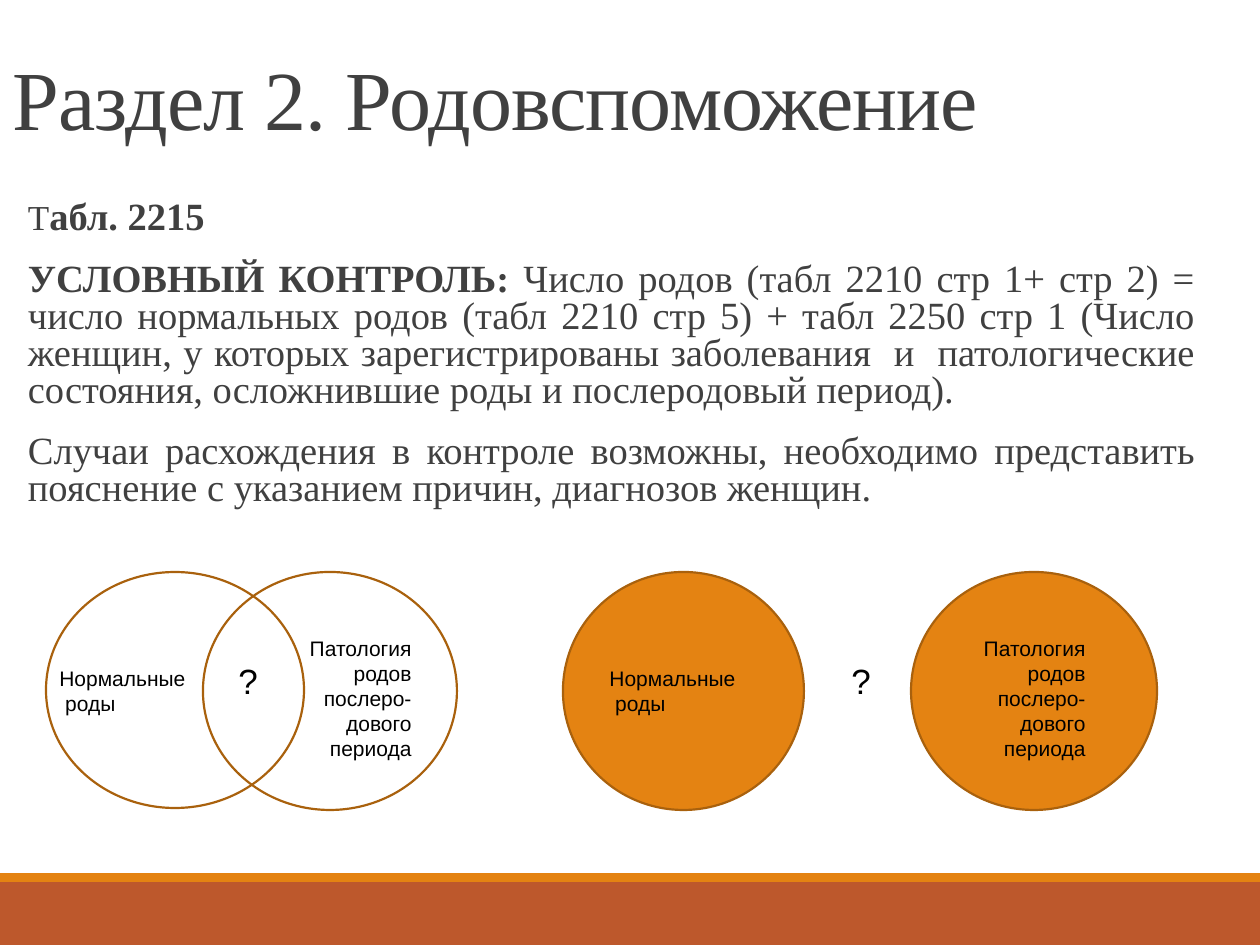
from pptx import Presentation
from pptx import util as u
from pptx.dml.color import RGBColor
from pptx.enum import shapes, text

WHITE = RGBColor(0xFF, 0xFF, 0xFF)
BLACK = RGBColor(0x00, 0x00, 0x00)
GREY = RGBColor(0x40, 0x40, 0x40)
ORANGE = RGBColor(0xE4, 0x83, 0x12)
RUST = RGBColor(0xBD, 0x58, 0x2C)
BROWN = RGBColor(0xA9, 0x61, 0x0D)
SERIF, SANS = "Times New Roman", "Arial"
WIDTH, HEIGHT = 1260, 945
PX = 914400 / 126
ALIGN = text.PP_ALIGN


class Page:
    """Current slide together with its style."""

    def __init__(self, deck):
        self.slide = deck.slides.add_slide(deck.slide_layouts[6])
        fill = self.slide.background.fill
        fill.solid()
        fill.fore_color.rgb = WHITE

    @staticmethod
    def emu(*lengths):
        return [u.Emu(round(length * PX)) for length in lengths]

    def shape(self, kind, box, fill=None, line=None):
        item = self.slide.shapes.add_shape(kind, *self.emu(*box))
        item.shadow.inherit = False
        if fill is None:
            item.fill.background()
        else:
            item.fill.solid()
            item.fill.fore_color.rgb = fill
        if line is None:
            item.line.fill.background()
        else:
            item.line.color.rgb = line
            item.line.width = u.Pt(1.25)

    def frame(self, box, **settings):
        frame = self.slide.shapes.add_textbox(*self.emu(*box)).text_frame
        for name, value in ({"word_wrap": True} | settings).items():
            setattr(frame, name, value)
        return frame

    def style(self, run, size, font, color, bold=False):
        values = {"size": u.Pt(size), "name": font, "bold": bold}
        for name, value in values.items():
            setattr(run.font, name, value)
        run.font.color.rgb = color

    def title(self, box, words):
        frame = self.frame(box, vertical_anchor=text.MSO_ANCHOR.BOTTOM)
        line = frame.paragraphs[0]
        line.line_spacing = 0.85
        run = line.add_run()
        run.text = words
        self.style(run, 48, SERIF, GREY)
        run.font._element.set("spc", "-50")

    def body(self, box, paragraphs):
        frame = self.frame(box, margin_left=0, margin_right=0)
        for index, (align, runs) in enumerate(paragraphs):
            line = frame.add_paragraph() if index else frame.paragraphs[0]
            values = {"alignment": align, "line_spacing": 0.8,
                      "space_before": u.Pt(12), "space_after": u.Pt(2)}
            for name, value in values.items():
                setattr(line, name, value)
            for words, size, bold in runs:
                run = line.add_run()
                run.text = words
                self.style(run, size, SERIF, GREY, bold)

    def label(self, box, words, size=12, align=ALIGN.LEFT, wrap=True):
        frame = self.frame(box, word_wrap=wrap,
                           auto_size=text.MSO_AUTO_SIZE.SHAPE_TO_FIT_TEXT)
        line = frame.paragraphs[0]
        line.text = words
        line.alignment = align
        for run in line.runs:
            self.style(run, size, SANS, BLACK)


def main():
    deck = Presentation()
    deck.slide_width, deck.slide_height = Page.emu(WIDTH, HEIGHT)
    page = Page(deck)

    # Footer bands
    page.shape(shapes.MSO_SHAPE.RECTANGLE, (0, 882, WIDTH, 63), RUST)
    page.shape(shapes.MSO_SHAPE.RECTANGLE, (0, 873, WIDTH, 9), ORANGE)

    # Heading and explanation
    page.title((0, 38, 1134, 116), "Раздел 2. Родовспоможение")
    page.body((28, 195, 1167, 649), [
        (ALIGN.LEFT, [("Т", 20, False), ("абл. 2215", 22, True)]),
        (ALIGN.JUSTIFY, [
            ("УСЛОВНЫЙ КОНТРОЛЬ:", 22, True),
            (" Число родов (табл 2210 стр 1+ стр 2) = число нормальных родов "
             "(табл 2210 стр 5) + табл 2250 стр 1 (Число женщин, у которых "
             "зарегистрированы заболевания  и  патологические состояния, "
             "осложнившие роды и послеродовый период).", 22, False)]),
        (ALIGN.JUSTIFY, [
            ("Случаи расхождения в контроле возможны, необходимо представить "
             "пояснение с указанием причин, диагнозов женщин.", 22, False)]),
    ])

    # Overlapping sets on the left, separate sets on the right
    for left, width, height, fill in [(46, 258, 236, None),
                                      (203, 254, 238, None),
                                      (563, 241, 238, ORANGE),
                                      (911, 246, 238, ORANGE)]:
        page.shape(shapes.MSO_SHAPE.OVAL, (left, 572, width, height),
                   fill, BROWN)

    # Set names and question mark of each diagram
    for normal, pathology, question in [(47, 285, 226), (597, 959, 839)]:
        page.label((normal, 659, 169, 63), "Нормальные\v роды")
        page.label((pathology, 629, 139, 140),
                   "Патология родов послеро-дового периода",
                   align=ALIGN.RIGHT)
        page.label((question, 653, 45, 55), "?", size=20, wrap=False)

    deck.save("out.pptx")


if __name__ == "__main__":
    main()
